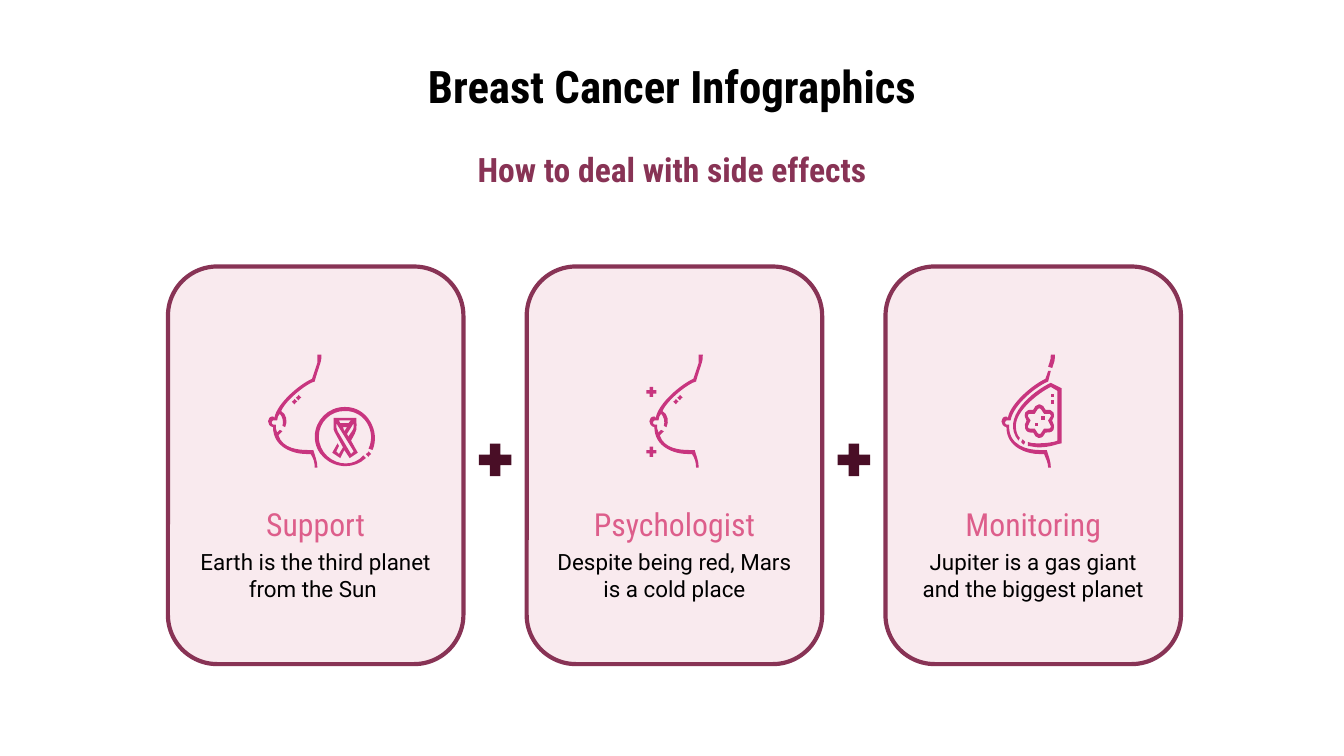
from lxml.etree import SubElement
from pptx import Presentation
from pptx.dml.color import RGBColor
from pptx.enum.shapes import MSO_SHAPE as SHAPE
from pptx.enum.text import MSO_ANCHOR as ANCHOR, MSO_AUTO_SIZE as AUTO, PP_ALIGN as ALIGN
from pptx.oxml.ns import qn
from pptx.util import Pt

COLORS = {
    "black": "000000", "plum": "883355", "blush": "F9EAEE",
    "rose": "DD5E8B", "wine": "490E26", "magenta": "C8357F",
}
HEAD_FONT, BODY_FONT = "Roboto Condensed", "Roboto"
TITLE = "Breast Cancer Infographics"
SUBTITLE = "How to deal with side effects"

# Icon outlines, in hundredths of an inch from the icon's top left corner
PROFILE = (
    "M38 0 C38 2 38 4 38 6 L34 18 C25 22 8 36 6 47 C6 46 6 46 5 46 "
    "C0 46 0 53 5 54 C5 69 20 74 30 74 C31 74 32 74 33 74 C35 77 36 80 36 84 "
    "L38 84 C38 79 36 75 35 71 C34 71 33 71 31 71 C24 71 12 70 9 60 "
    "C10 59 11 58 12 57 L10 56 C10 56 9 57 8 58 C7 56 7 54 7 52 L5 52 "
    "C4 52 4 51 4 50 C4 50 4 49 5 49 L8 49 C8 47 9 45 10 44 "
    "C12 46 13 50 12 53 L14 54 C16 50 15 44 11 42 C15 33 31 21 36 20 "
    "C36 19 40 7 40 7 C41 4 41 2 41 0 Z")
DASH = "M2 0 C2 1 1 1 0 2 L2 4 C3 3 3 2 4 2 L2 0 Z"
SMALL_PLUS = (
    "M2.5 0 L2.5 2.5 L0 2.5 L0 5 L2.5 5 L2.5 7.5 L5 7.5 L5 5 "
    "L7.5 5 L7.5 2.5 L5 2.5 L5 0 Z")
RING = (
    "M59 39 C59 39 59 39 58 39 C46 39 36 49 36 61 C36 74 47 83 59 83 "
    "C64 83 70 81 74 77 L72 75 C69 79 64 81 59 81 C49 81 39 73 39 61 "
    "C39 50 48 42 58 42 C59 42 59 42 59 42 C73 42 82 57 76 70 L79 71 "
    "C85 57 75 39 59 39 Z")
RIBBON = (
    "M63 49 L61 51 L55 51 L54 49 Z M60 54 L58 57 L57 54 Z "
    "M65 51 L65 54 C65 56 62 59 61 61 L60 59 L65 51 Z "
    "M52 51 L65 72 L63 74 L53 57 C53 56 52 55 52 54 L52 51 Z "
    "M50 47 L50 54 C50 55 50 57 51 58 L57 69 L54 74 L52 72 L54 68 L53 66 "
    "L49 73 L55 77 L58 71 L62 77 L68 73 L63 64 C68 55 67 57 67 47 Z")
LOWER_PROFILE = (
    "M36 12 L34 18 C25 22 8 36 6 47 C6 46 5 46 5 46 C0 46 0 53 5 54 "
    "C5 69 20 74 30 74 C31 74 32 74 33 74 C34 77 36 80 36 84 L38 84 "
    "C38 79 36 75 35 71 C34 71 32 71 30 71 C21 71 6 68 7 52 L5 52 "
    "C4 52 4 51 4 50 C4 50 4 49 5 49 L8 49 C10 37 28 23 36 20 L38 12 L36 12 Z")
UPPER_PROFILE = (
    "M38 0 C38 2 38 4 37 6 L36 9 L39 10 C39 10 40 7 40 7 C41 5 41 2 41 0 Z")
FLOWER = (
    "M30 40 C30 40 31 40 31 41 L33 44 L36 44 C37 44 38 44 38 45 "
    "C38 45 38 46 38 46 L36 49 L38 53 C38 53 38 54 38 54 C38 55 37 55 36 55 "
    "L33 55 L31 58 C31 59 30 59 29 59 C29 59 28 59 28 58 L26 55 L23 55 "
    "C22 55 21 55 21 54 C21 54 21 53 21 53 L23 49 L21 46 C21 46 21 45 21 45 "
    "C21 44 22 44 23 44 L26 44 L28 41 C28 40 29 40 30 40 Z "
    "M29 37 C27 37 26 39 25 41 C22 41 20 41 19 43 C18 46 19 47 20 49 "
    "C19 51 18 53 19 55 C20 58 22 58 25 58 C26 60 27 62 29 62 "
    "C32 62 33 60 34 58 C36 58 39 58 40 56 C41 53 40 51 39 49 "
    "C40 47 41 46 40 43 C39 41 37 41 34 41 C33 39 32 37 30 37 "
    "C29 37 29 37 29 37 Z")
SHELL = (
    "M38 21 C25 27 0 47 14 64 L15 62 C13 60 12 57 12 53 C12 42 28 29 38 24 "
    "L43 27 L43 64 C41 65 35 66 29 66 C26 66 24 66 21 65 L21 68 "
    "C23 68 26 69 29 69 C38 69 44 66 46 66 L46 25 L38 21 Z")
SHELL_DASH = "M17 63 L16 65 C16 66 17 66 18 67 L19 65 C18 64 18 64 17 63 Z"
SQUARE = "M0 0 L0 2.4 L2.4 2.4 L2.4 0 Z"

# Icon parts: outline, x shift, y shift
DASHES = [(DASH, 22, 30), (DASH, 19, 33)]
CARDS = [
    {"heading": "Support", "body": "Earth is the third planet from the Sun ",
     "icon_dx": 52.7,
     "icon": [(PROFILE, 0, 0), (DASH, 74, 72), (RING, 0, 0), (RIBBON, 0, 0)] + DASHES},
    {"heading": "Psychologist", "body": "Despite being red, Mars is a cold place",
     "icon_dx": 64.8,
     "icon": [(PROFILE, 0, 0), (SMALL_PLUS, -1, 24), (SMALL_PLUS, -1, 68.5)] + DASHES},
    {"heading": "Monitoring", "body": "Jupiter is a gas giant\vand the biggest planet",
     "icon_dx": 61.2,
     "icon": [(LOWER_PROFILE, 0, 0), (UPPER_PROFILE, 0, 0), (FLOWER, 0, 0),
              (SHELL, 0, 0), (SHELL_DASH, 0, 0), (SQUARE, 31, 46),
              (SQUARE, 26, 51), (SQUARE, 38, 29), (SQUARE, 38, 34)]},
]

CARD_X, CARD_Y, CARD_W, CARD_H, PITCH = 90, 142.8, 158.3, 213, 192.2
TEXT_W, PLUS_SIZE, ICON_Y, ICON_UNIT = 146.2, 23.8, 190, 0.72


def rgb(name):
    return RGBColor.from_string(COLORS[name])


def set_text(sp, text, size, font, color, bold=False, anchor=ANCHOR.MIDDLE):
    tf = sp.text_frame
    tf.text = text
    tf.word_wrap, tf.auto_size, tf.vertical_anchor = True, AUTO.NONE, anchor
    tf.margin_left = tf.margin_right = tf.margin_top = tf.margin_bottom = Pt(7.2)
    p = tf.paragraphs[0]
    p.alignment = ALIGN.CENTER
    for r in p.runs:
        r.font.size, r.font.name, r.font.bold = Pt(size), font, bold
        r.font.color.rgb = rgb(color)


def add_text(s, box, *style, **options):
    set_text(s.shapes.add_textbox(*map(Pt, box)), *style, **options)


def add_shape(s, kind, box, fill, line=None):
    paint(s.shapes.add_shape(kind, *map(Pt, box)), fill, line)


def paint(sp, fill, line=None):
    sp.shadow.inherit = False
    sp.fill.solid()
    sp.fill.fore_color.rgb = rgb(fill)
    if line:
        sp.line.color.rgb = rgb(line)
        sp.line.width = Pt(2.25)
    else:
        sp.line.fill.background()


def bend(sp, letters):
    """Join each three line steps that stand for a C into one Bezier curve."""
    path = next(sp._element.iter(qn("a:path")))
    steps = iter(list(path))
    for letter in letters:
        step = next(steps)
        if letter == "C":
            curve = SubElement(path, qn("a:cubicBezTo"))
            path.replace(step, curve)
            curve.append(step[0])
            for _ in range(2):
                step = next(steps)
                curve.append(step[0])
                path.remove(step)


def add_outline(group, outline, x, y):
    builder = None
    for contour in outline.split("Z")[:-1]:
        numbers = [float(v.lstrip("MLC")) for v in contour.split()]
        points = [(Pt(x + ICON_UNIT * px), Pt(y + ICON_UNIT * py))
                  for px, py in zip(numbers[::2], numbers[1::2])]
        if builder is None:
            builder = group.shapes.build_freeform(*points[0])
        else:
            builder.move_to(*points[0])
        builder.add_line_segments(points[1:], close=True)
    sp = builder.convert_to_shape()
    bend(sp, [c for c in outline if c in "MLCZ"])
    paint(sp, "magenta")


def add_icon(s, parts, x, y):
    group = s.shapes.add_group_shape()
    for outline, dx, dy in parts:
        add_outline(group, outline, x + ICON_UNIT * dx, y + ICON_UNIT * dy)


def add_card(s, card, x):
    add_shape(s, SHAPE.ROUNDED_RECTANGLE, (x, CARD_Y, CARD_W, CARD_H), "blush", "plum")
    text_x = x + (CARD_W - TEXT_W) / 2
    add_text(s, (text_x, 287.3, TEXT_W, 41.8), card["body"], 12, BODY_FONT, "black")
    add_text(s, (text_x, 263.5, TEXT_W, 33.8), card["heading"], 17, HEAD_FONT, "rose")
    add_icon(s, card["icon"], x + card["icon_dx"], ICON_Y)


def main():
    prs = Presentation()
    prs.slide_width, prs.slide_height = Pt(720), Pt(405)
    s = prs.slides.add_slide(prs.slide_layouts[5])
    title = s.shapes.title
    title.left, title.top, title.width, title.height = map(Pt, (14, 24.5, 692, 45.4))
    set_text(title, TITLE, 24, HEAD_FONT, "black", bold=True, anchor=ANCHOR.TOP)
    add_text(s, (225, 76.2, 270, 28.8), SUBTITLE, 18, HEAD_FONT, "plum", bold=True)

    for i, card in enumerate(CARDS):
        x = CARD_X + i * PITCH
        add_card(s, card, x)
        if i:
            plus_x = x - (PITCH - CARD_W + PLUS_SIZE) / 2
            add_shape(s, SHAPE.MATH_PLUS, (plus_x, 234.5, PLUS_SIZE, PLUS_SIZE), "wine")
    prs.save("out.pptx")


if __name__ == "__main__":
    main()
